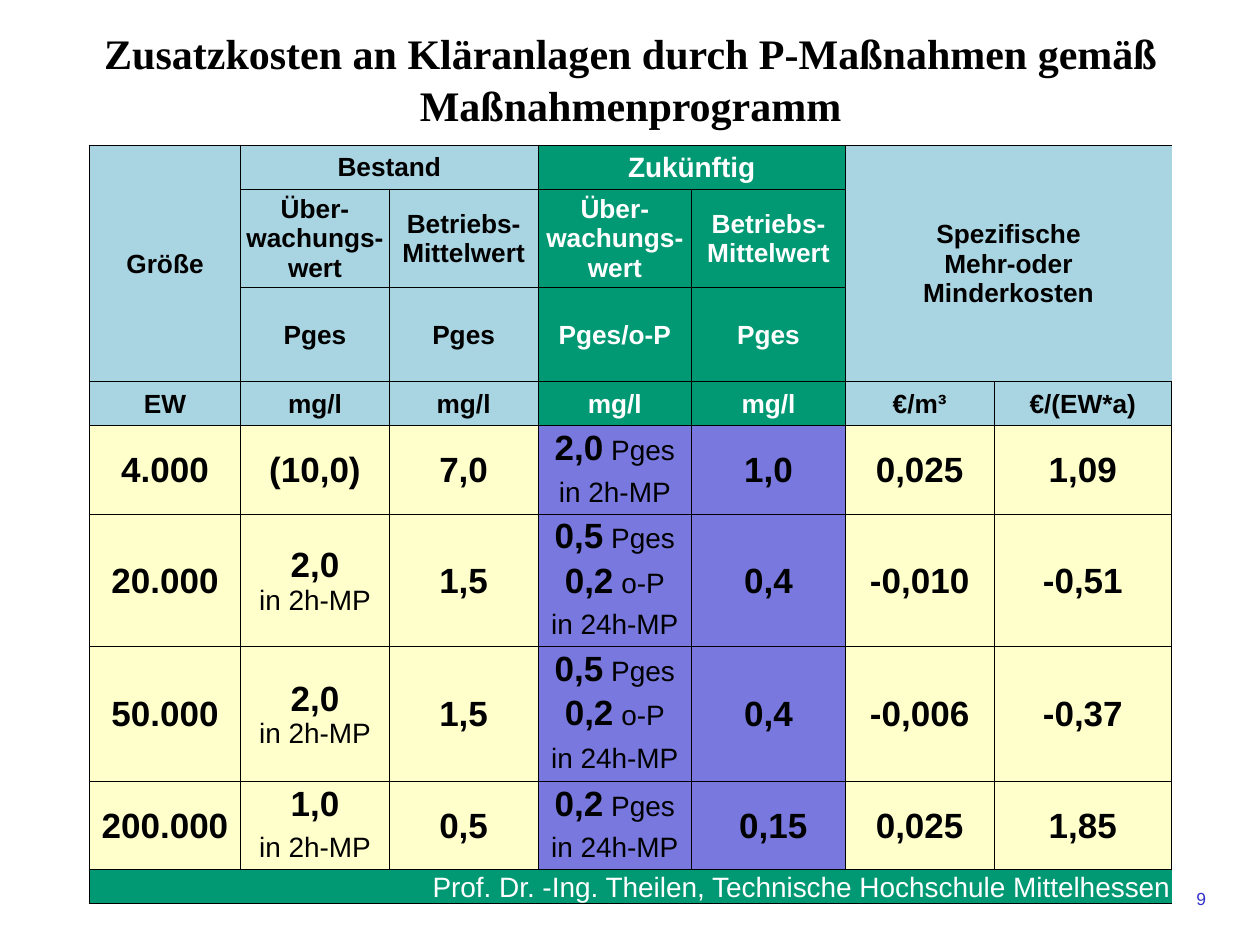
from itertools import accumulate

from lxml import etree
from pptx import Presentation
from pptx.dml.color import RGBColor
from pptx.enum.text import MSO_ANCHOR, PP_ALIGN
from pptx.oxml.ns import qn
from pptx.util import Inches, Pt

CENTER, RIGHT = PP_ALIGN.CENTER, PP_ALIGN.RIGHT
MIDDLE, BOTTOM = MSO_ANCHOR.MIDDLE, MSO_ANCHOR.BOTTOM


class Theme:
    black, white, page = "000000", "FFFFFF", "3333CC"
    current, future = "A9D4E1", "009973"
    value, future_value = "FFFFCC", "7878DE"
    sans, serif = "Arial", "Times New Roman"
    title, number, unit, heading, page_size = 24, 20, 16, 15, 10
    thin, thick = 0.5, 1


# Content
TITLE = "Zusatzkosten an Kläranlagen durch P-Maßnahmen gemäß Maßnahmenprogramm"
PAGE = "9"
SOURCE = "Prof. Dr. -Ing. Theilen, Technische Hochschule Mittelhessen"

# Headings: row, column, rows, columns, paragraphs
HEADINGS = [
    (0, 0, 3, 1, ["Größe"]),
    (0, 1, 1, 2, ["Bestand"]),
    (0, 3, 1, 2, ["Zukünftig"]),
    (0, 5, 3, 2, ["Spezifische", "Mehr-oder", "Minderkosten"]),
]
for first in (1, 3):
    HEADINGS += [(1, first, 1, 1, ["Über-", "wachungs-wert"]),
                 (1, first + 1, 1, 1, ["Betriebs-Mittelwert"])]
SUBSTANCES = ["Pges", "Pges", "Pges/o-P", "Pges"]
UNITS = ["EW", "mg/l", "mg/l", "mg/l", "mg/l", "€/m³", "€/(EW*a)"]
HEADINGS += [(2, col, 1, 1, [text]) for col, text in enumerate(SUBSTANCES, 1)]
HEADINGS += [(3, col, 1, 1, [text]) for col, text in enumerate(UNITS)]

# Plants: a list is stacked over the plant's rows; "|" starts the small text
PLANTS = [
    (2, ["4.000", "(10,0)", "7,0", ["2,0| Pges", "|in 2h-MP"],
         "1,0", "0,025", "1,09"]),
    (3, ["20.000", "2,0|\nin 2h-MP", "1,5",
         ["0,5| Pges", "0,2| o-P", "|in 24h-MP"], "0,4", "-0,010", "-0,51"]),
    (3, ["50.000", "2,0|\nin 2h-MP", "1,5",
         ["0,5| Pges", "0,2| o-P", "|in 24h-MP"], "0,4", "-0,006", "-0,37"]),
    (2, ["200.000", ["1,0", "|in 2h-MP"], "0,5",
         ["0,2| Pges", "|in 24h-MP"], " 0,15", "0,025", "1,85"]),
]

# Grid, in inches
LEFT, TOP = 0.71, 1.15
COLUMNS = [1.2, 1.18, 1.18, 1.22, 1.22, 1.18, 1.41]
HEAD_ROWS = [0.35, 0.78, 0.75, 0.35]
ROWS = HEAD_ROWS + [0.35] * sum(rows for rows, _ in PLANTS) + [0.27]
ROWS[11] = 0.37
FUTURE_COLUMNS = (3, 4)


def write(frame, paragraphs, size, small=Theme.unit, bold=True,
          color=Theme.black, font=Theme.sans, align=CENTER, spacing=None):
    for index, text in enumerate(paragraphs):
        paragraph = frame.paragraphs[0] if index == 0 else frame.add_paragraph()
        paragraph.alignment = align
        paragraph.line_spacing = spacing
        main, _, minor = text.partition("|")
        if minor.startswith("\n"):
            parts = [(main, size, bold), None, (minor[1:], small, False)]
        else:
            parts = [(main, size, bold), (minor, small, False)]
        for part in parts:
            if part is None:
                paragraph.add_line_break()
            elif part[0]:
                run = paragraph.add_run()
                run.text = part[0]
                run.font.size, run.font.bold = Pt(part[1]), part[2]
                run.font.name = font
                run.font.color.rgb = RGBColor.from_string(color)


def draw_edge(cell, side, width):
    line = etree.SubElement(cell._tc.get_or_add_tcPr(), qn(f"a:ln{side}"),
                            w=str(Pt(width)))
    if width:
        fill = etree.SubElement(line, qn("a:solidFill"))
        etree.SubElement(fill, qn("a:srgbClr"), val=Theme.black)
    else:
        etree.SubElement(line, qn("a:noFill"))


def paint_block(table, row, col, rows, cols, fill, anchor=MIDDLE):
    """Fill a block of cells and outline it without inner lines."""
    last_row = len(ROWS) - 1
    for r in range(row, row + rows):
        for c in range(col, col + cols):
            cell = table.cell(r, c)
            cell.margin_left = cell.margin_right = cell.margin_top = Inches(0.01)
            cell.margin_bottom = 0
            cell.vertical_anchor = anchor
            side = Theme.thick if r == last_row else Theme.thin
            above = Theme.thick if r == last_row else Theme.thin
            below = Theme.thick if r >= last_row - 1 else Theme.thin
            draw_edge(cell, "L", side if c == col else 0)
            draw_edge(cell, "R", side if c == col + cols - 1 else 0)
            draw_edge(cell, "T", above if r == row else 0)
            draw_edge(cell, "B", below if r == row + rows - 1 else 0)
            cell.fill.solid()
            cell.fill.fore_color.rgb = RGBColor.from_string(fill)


def merge_block(table, row, col, rows, cols):
    cell = table.cell(row, col)
    if rows * cols > 1:
        cell.merge(table.cell(row + rows - 1, col + cols - 1))
    return cell.text_frame


def fill_headings(table):
    for row, col, rows, cols, lines in HEADINGS:
        future = col in FUTURE_COLUMNS
        paint_block(table, row, col, rows, cols,
                    Theme.future if future else Theme.current)
        write(merge_block(table, row, col, rows, cols), lines,
              size=Theme.unit if future and row == 0 else Theme.heading,
              color=Theme.white if future else Theme.black)


def fill_plants(table):
    counts = [rows for rows, _ in PLANTS]
    starts = accumulate(counts[:-1], initial=len(HEAD_ROWS))
    for row, (rows, values) in zip(starts, PLANTS):
        for col, value in enumerate(values):
            future = col in FUTURE_COLUMNS
            paint_block(table, row, col, rows, 1,
                        Theme.future_value if future else Theme.value)
            if isinstance(value, list):
                for offset, line in enumerate(value):
                    write(table.cell(row + offset, col).text_frame, [line],
                          size=Theme.number)
            else:
                write(merge_block(table, row, col, rows, 1), [value],
                      size=Theme.number)


def fill_source(table):
    block = (len(ROWS) - 1, 0, 1, len(COLUMNS))
    paint_block(table, *block, Theme.future, anchor=BOTTOM)
    write(merge_block(table, *block), [SOURCE], size=Theme.unit, bold=False,
          color=Theme.white, align=RIGHT)


def main():
    deck = Presentation()
    deck.slide_width, deck.slide_height = Inches(10), Inches(7.5)
    slide = deck.slides.add_slide(deck.slide_layouts[5])

    # Title
    title = slide.shapes.title
    title.left, title.top = Inches(LEFT), Inches(0.16)
    title.width, title.height = Inches(sum(COLUMNS)), Inches(0.91)
    title.text_frame.vertical_anchor = MIDDLE
    write(title.text_frame, [TITLE], size=Theme.title, font=Theme.serif,
          spacing=1.05)

    # Cost table
    table = slide.shapes.add_table(
        len(ROWS), len(COLUMNS), Inches(LEFT), Inches(TOP),
        Inches(sum(COLUMNS)), Inches(sum(ROWS))).table
    table.first_row = table.horz_banding = False
    for column, width in zip(table.columns, COLUMNS):
        column.width = Inches(width)
    for row, height in zip(table.rows, ROWS):
        row.height = Inches(height)
    fill_headings(table)
    fill_plants(table)
    fill_source(table)

    # Page number
    page = slide.shapes.add_textbox(Inches(7.17), Inches(7), Inches(2.5),
                                    Inches(0.33)).text_frame
    page.word_wrap = True
    write(page, [PAGE], size=Theme.page_size, bold=False, color=Theme.page,
          align=RIGHT)

    deck.save("out.pptx")


if __name__ == "__main__":
    main()
